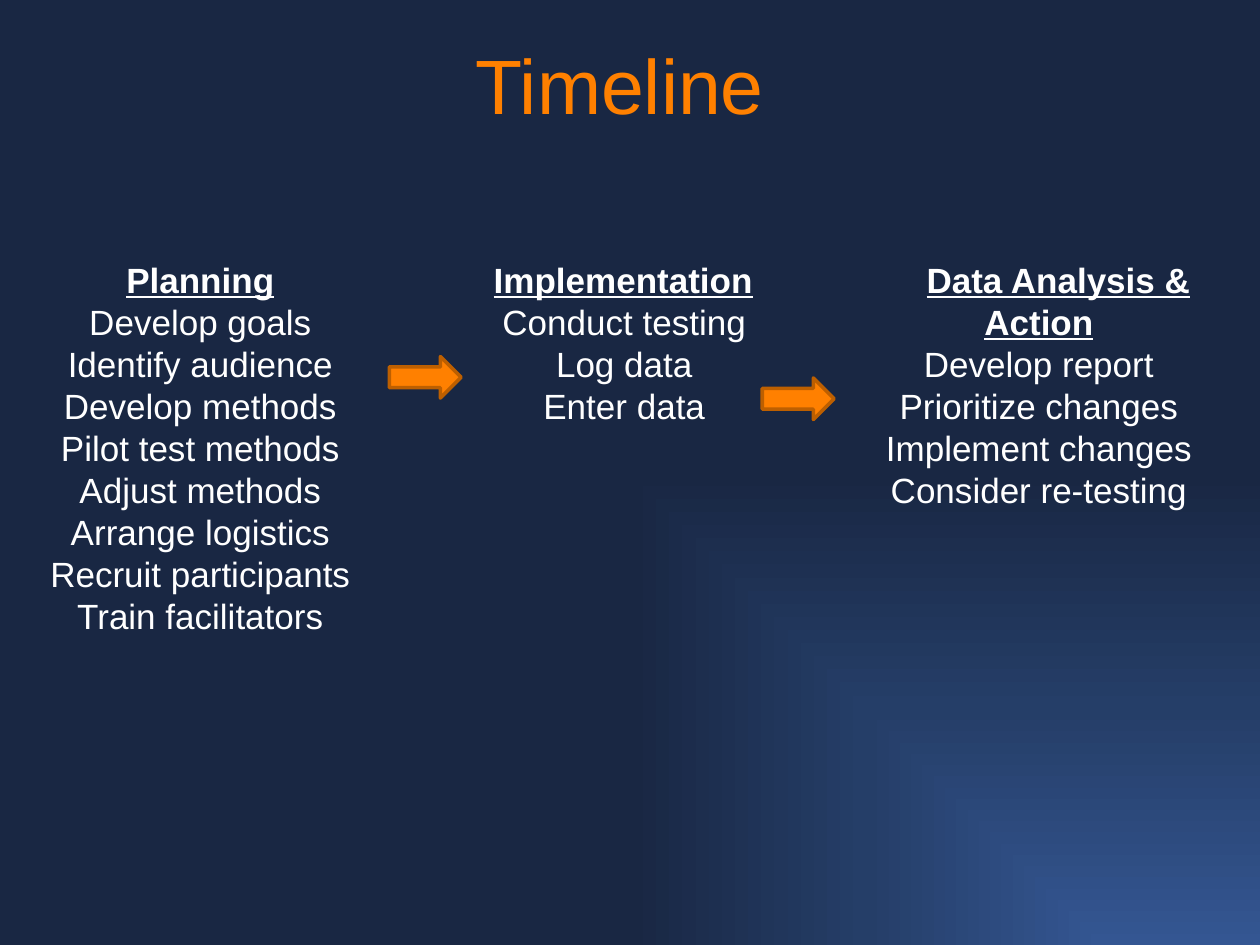
from lxml import etree
from pptx import Presentation
from pptx.dml.color import RGBColor
from pptx.enum.shapes import MSO_SHAPE
from pptx.enum.text import PP_ALIGN
from pptx.oxml import parse_xml
from pptx.oxml.ns import nsdecls, qn
from pptx.util import Inches, Pt

ARROW = MSO_SHAPE.RIGHT_ARROW
LEFT, CENTER = PP_ALIGN.LEFT, PP_ALIGN.CENTER
FONT = "Arial"
COLORS = {"text": "FFFFFF", "accent": "FF8000", "edge": "BD5F00"}
GLOW = [(0, "345692"), (50, "253E68"), (100, "192743")]

# box, heading alignment, heading first-line indent, heading, steps
PHASES = [
    ((0.25, 2, 2.68, 5.15), CENTER, 0, "Planning",
     ["Develop goals", "Identify audience", "Develop methods",
      "Pilot test methods", "Adjust methods", "Arrange logistics",
      "Recruit participants", "Train facilitators"]),
    ((3.82, 2, 2.27, 3.13), LEFT, 0, "Implementation",
     ["Conduct testing", "Log data", "Enter data"]),
    ((6.62, 2, 3.25, 3.47), CENTER, 0.31, "Data Analysis & Action",
     ["Develop report", "Prioritize changes", "Implement changes",
      "Consider re-testing"]),
]
ARROWS = [(3.09, 2.83, 0.57, 0.33), (6.05, 3, 0.57, 0.33)]


def color(name):
    return RGBColor.from_string(COLORS[name])


def add_glow(slide):
    """Fill the background with a gradient from the bottom right corner."""
    slide.background.fill.gradient()
    old = slide.element.find(".//" + qn("a:gradFill"))
    new = parse_xml(
        f'<a:gradFill {nsdecls("a")} rotWithShape="1"><a:gsLst/>'
        '<a:path path="rect"><a:fillToRect l="100000" t="100000"/></a:path>'
        '</a:gradFill>')
    for pos, tone in GLOW:
        stop = etree.SubElement(new[0], qn("a:gs"), pos=str(pos * 1000))
        etree.SubElement(stop, qn("a:srgbClr"), val=tone)
    old.getparent().replace(old, new)


def add_frame(slide, box):
    frame = slide.shapes.add_textbox(*map(Inches, box)).text_frame
    frame.word_wrap = True
    return frame


def add_line(par, text, size, tone, align=CENTER, head=False):
    par.alignment = align
    run = par.add_run()
    run.text = text
    font = run.font
    font.name, font.size = FONT, Pt(size)
    font.bold = font.underline = head
    font.color.rgb = color(tone)


def add_title(slide, box):
    add_line(add_frame(slide, box).paragraphs[0], "Timeline", 44, "accent")


def add_phase(slide, box, align, indent, head, steps):
    frame = add_frame(slide, box)
    first = frame.paragraphs[0]
    add_line(first, head, 20, "text", align, head=True)
    if indent:
        first._p.get_or_add_pPr().set("indent", str(Inches(indent)))
    for step in steps:
        add_line(frame.add_paragraph(), step, 20, "text")


def add_arrow(slide, box):
    arrow = slide.shapes.add_shape(ARROW, *map(Inches, box))
    arrow.shadow.inherit = False
    arrow.fill.solid()
    arrow.fill.fore_color.rgb = color("accent")
    arrow.line.color.rgb = color("edge")
    arrow.line.width = Pt(2)


def main():
    deck = Presentation()
    deck.slide_width, deck.slide_height = Inches(10), Inches(7.5)
    slide = deck.slides.add_slide(deck.slide_layouts[6])
    add_glow(slide)
    for phase in PHASES:
        add_phase(slide, *phase)
    add_title(slide, (0.21, 0.25, 9.42, 0.84))
    for box in ARROWS:
        add_arrow(slide, box)
    deck.save("out.pptx")


if __name__ == "__main__":
    main()
